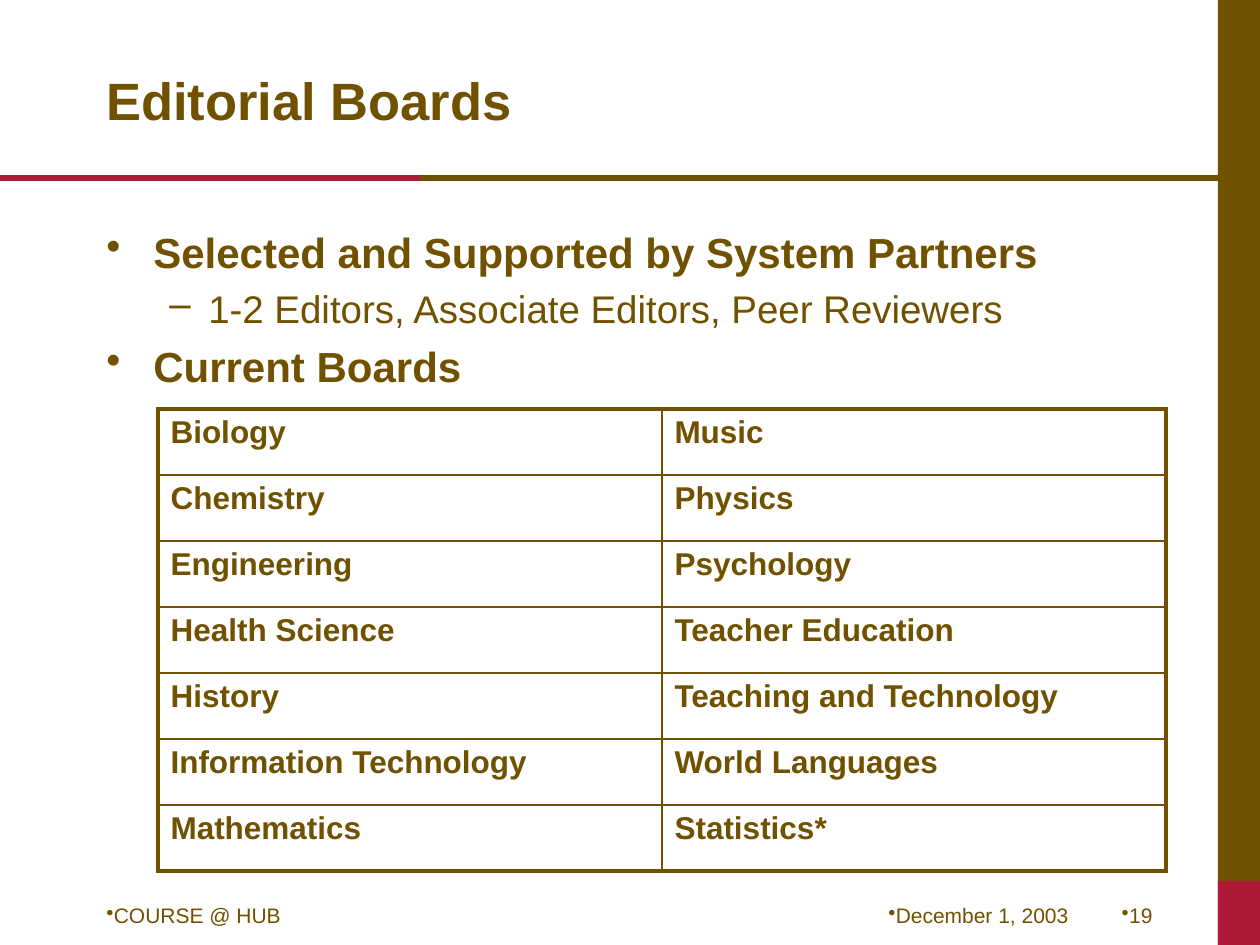
"""Build the Editorial Boards slide."""
from lxml.etree import SubElement
from pptx import Presentation
from pptx.dml.color import RGBColor
from pptx.enum.shapes import MSO_CONNECTOR, MSO_SHAPE
from pptx.enum.text import MSO_ANCHOR, PP_ALIGN
from pptx.oxml.ns import qn
from pptx.util import Pt

PX = 914400 // 126
WIDE, HIGH = 1260, 945
THEME = {
    "font": "Arial", "brown": "705100", "red": "AE1938",
    "title": 30, "head": 24, "sub": 22, "cell": 18, "foot": 12,
    "rule": 3, "thin": 1, "thick": 2.25, "gap": 5,
}
BARS = [((1218, 0, 42, 945), "brown"), ((1218, 881, 42, 64), "red")]
RULES = [(WIDE, "brown"), (420, "red")]
RULE_Y = 178
HEAD = {"size": "head", "bold": True, "bullet": ("•", 47, -47)}
SUB = {"size": "sub", "bullet": ("–", 102, -39), "level": 1}
FOOT = {"size": "foot", "bullet": ("•", 0, 0)}
RIGHT = {**FOOT, "align": PP_ALIGN.RIGHT}
TEXTS = [
    ((819, 892, 262, 42), MSO_ANCHOR.BOTTOM, [("December 1, 2003", RIGHT)]),
    ((94, 892, 725, 42), MSO_ANCHOR.BOTTOM, [("COURSE @ HUB", FOOT)]),
    ((1102, 892, 63, 42), MSO_ANCHOR.BOTTOM, [("19", RIGHT)]),
    ((94, 42, 672, 116), MSO_ANCHOR.MIDDLE,
     [("Editorial Boards", {"size": "title", "bold": True})]),
    ((94, 220, 1071, 242), MSO_ANCHOR.TOP, [
        ("Selected and Supported by System Partners", HEAD),
        ("1-2 Editors, Associate Editors, Peer Reviewers", SUB),
        ("Current Boards", HEAD),
    ]),
]
BOARDS = [
    ("Biology", "Music"),
    ("Chemistry", "Physics"),
    ("Engineering", "Psychology"),
    ("Health Science", "Teacher Education"),
    ("History", "Teaching and Technology"),
    ("Information Technology", "World Languages"),
    ("Mathematics", "Statistics*"),
]
GRID = (158, 409)
COL, ROW = 504, 66


def emu(vals):
    return [val * PX for val in vals]


def tint(name):
    return RGBColor.from_string(THEME[name])


def put(item, vals):
    for key, val in vals.items():
        setattr(item, key, val)


def write(para, text, size, bold=False, bullet=None, level=0,
          align=PP_ALIGN.LEFT, gap=0):
    put(para, {"level": level, "alignment": align, "space_before": Pt(gap)})
    if bullet:
        mark, left, hang = bullet
        props = para._p.get_or_add_pPr()
        props.set("marL", str(left * PX))
        props.set("indent", str(hang * PX))
        SubElement(props, qn("a:buChar"), char=mark)
    run = para.add_run()
    run.text = text
    put(run.font, {"name": THEME["font"], "size": Pt(THEME[size]), "bold": bold})
    run.font.color.rgb = tint("brown")


def add_bar(slide, box, name):
    bar = slide.shapes.add_shape(MSO_SHAPE.RECTANGLE, *emu(box))
    bar.shadow.inherit = False
    bar.fill.solid()
    bar.fill.fore_color.rgb = tint(name)
    bar.line.fill.background()


def add_rule(slide, end, name):
    rule = slide.shapes.add_connector(
        MSO_CONNECTOR.STRAIGHT, *emu((0, RULE_Y, end, RULE_Y)))
    rule.line.color.rgb = tint(name)
    rule.line.width = Pt(THEME["rule"])
    SubElement(rule._element.spPr, qn("a:effectLst"))


def add_text(slide, box, anchor, lines):
    frame = slide.shapes.add_textbox(*emu(box)).text_frame
    put(frame, {"word_wrap": True, "vertical_anchor": anchor})
    for num, (text, form) in enumerate(lines):
        para = frame.add_paragraph() if num else frame.paragraphs[0]
        write(para, text, gap=THEME["gap"] if num else 0, **form)


def edge(cell, outer):
    props = cell._tc.get_or_add_tcPr()
    for side, thick in outer.items():
        width = Pt(THEME["thick" if thick else "thin"])
        line = SubElement(props, qn("a:ln" + side), w=str(width))
        fill = SubElement(line, qn("a:solidFill"))
        SubElement(fill, qn("a:srgbClr"), val=THEME["brown"])


def add_grid(slide):
    rows, cols = len(BOARDS), len(BOARDS[0])
    box = (*GRID, COL * cols, ROW * rows)
    table = slide.shapes.add_table(rows, cols, *emu(box)).table
    put(table, {"first_row": False, "horz_banding": False})
    for col in table.columns:
        col.width = COL * PX
    for r, names in enumerate(BOARDS):
        table.rows[r].height = ROW * PX
        for c, name in enumerate(names):
            cell = table.cell(r, c)
            write(cell.text_frame.paragraphs[0], name, "cell", bold=True)
            edge(cell, {"L": c == 0, "R": c == cols - 1,
                        "T": r == 0, "B": r == rows - 1})
            cell.fill.background()


def main():
    deck = Presentation()
    put(deck, {"slide_width": WIDE * PX, "slide_height": HIGH * PX})
    slide = deck.slides.add_slide(deck.slide_layouts[6])
    for box, name in BARS:
        add_bar(slide, box, name)
    for end, name in RULES:
        add_rule(slide, end, name)
    for box, anchor, lines in TEXTS:
        add_text(slide, box, anchor, lines)
    add_grid(slide)
    deck.save("out.pptx")


if __name__ == "__main__":
    main()
